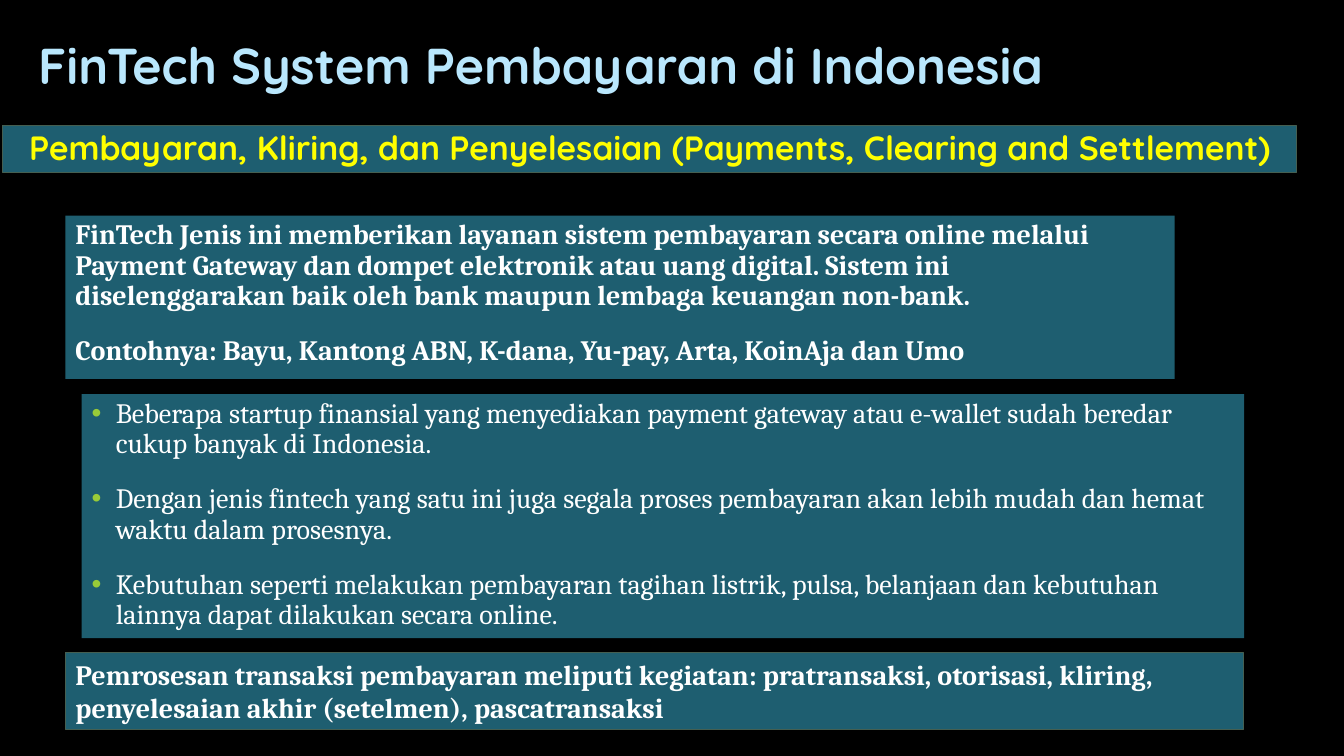
from lxml import etree
from pptx import Presentation
from pptx.dml.color import RGBColor
from pptx.enum.shapes import MSO_SHAPE
from pptx.enum.text import MSO_ANCHOR, PP_ALIGN
from pptx.oxml.ns import qn
from pptx.util import Inches, Pt

COLORS = {
    "background": "000000",
    "title": "B9E7FD",
    "panel": "1E5E70",
    "border": "455F51",
    "banner": "FFFF00",
    "text": "FFFFFF",
    "bullet": "99CB38",
}

TITLE = {"size": Pt(36), "name": "Quicksand", "bold": True}
BANNER = {"size": Pt(24), "name": "Quicksand", "bold": True}
STRONG = {"size": Pt(20), "name": "Cambria", "bold": True}
BODY = {"size": Pt(20), "name": "Cambria", "bold": False}

DEFINITION = [
    "FinTech Jenis ini memberikan layanan sistem pembayaran secara online melalui "
    "Payment Gateway dan dompet elektronik atau uang digital. Sistem ini "
    "diselenggarakan baik oleh bank maupun lembaga keuangan non-bank.",
    "Contohnya: Bayu, Kantong ABN, K-dana, Yu-pay, Arta, KoinAja dan Umo",
]
BENEFITS = [
    "Beberapa startup finansial yang menyediakan payment gateway atau e-wallet "
    "sudah beredar cukup banyak di Indonesia.",
    "Dengan jenis fintech yang satu ini juga segala proses pembayaran akan lebih "
    "mudah dan hemat waktu dalam prosesnya.",
    "Kebutuhan seperti melakukan pembayaran tagihan listrik, pulsa, belanjaan dan "
    "kebutuhan lainnya dapat dilakukan secara online.",
]
PROCESSING = [
    "Pemrosesan transaksi pembayaran meliputi kegiatan: pratransaksi, otorisasi, "
    "kliring, penyelesaian akhir (setelmen), pascatransaksi",
]


def color(name):
    return RGBColor.from_string(COLORS[name])


def add_bullet(paragraph):
    properties = paragraph._p.get_or_add_pPr()
    properties.set("marL", str(Inches(0.24)))
    properties.set("indent", str(-Inches(0.24)))
    bullet_color = etree.SubElement(properties, qn("a:buClr"))
    etree.SubElement(bullet_color, qn("a:srgbClr"), val=COLORS["bullet"])
    etree.SubElement(properties, qn("a:buFont"), typeface="Arial")
    etree.SubElement(properties, qn("a:buChar"), char="•")


def write_paragraphs(shape, texts, font_format, font_color, spacing=0.9,
                     align=PP_ALIGN.LEFT, anchor=MSO_ANCHOR.TOP, bullets=False):
    frame = shape.text_frame
    frame.word_wrap = True
    frame.vertical_anchor = anchor
    for index, text in enumerate(texts):
        paragraph = frame.paragraphs[0] if index == 0 else frame.add_paragraph()
        if bullets:
            add_bullet(paragraph)
        paragraph.alignment = align
        paragraph.line_spacing = spacing
        paragraph.space_before = Pt(18 if index else 0)
        run = paragraph.add_run()
        run.text = text
        for attribute, value in font_format.items():
            setattr(run.font, attribute, value)
        run.font.color.rgb = color(font_color)


def add_title(slide, text, box):
    shape = slide.shapes.add_textbox(*map(Inches, box))
    write_paragraphs(shape, [text], TITLE, "title", anchor=MSO_ANCHOR.BOTTOM)


def add_panel(slide, box, texts, font_format, font_color="text", border=False, **layout):
    shape = slide.shapes.add_shape(MSO_SHAPE.RECTANGLE, *map(Inches, box))
    shape.shadow.inherit = False
    shape.fill.solid()
    shape.fill.fore_color.rgb = color("panel")
    if border:
        shape.line.color.rgb = color("border")
        shape.line.width = Pt(0.75)
    else:
        shape.line.fill.background()
    write_paragraphs(shape, texts, font_format, font_color, **layout)


def main():
    presentation = Presentation()
    presentation.slide_width = Inches(13.33)
    presentation.slide_height = Inches(7.5)
    slide = presentation.slides.add_slide(presentation.slide_layouts[6])
    slide.background.fill.solid()
    slide.background.fill.fore_color.rgb = color("background")

    # Title and topic banner
    add_title(slide, "FinTech System Pembayaran di Indonesia", (0.28, 0.26, 11.33, 0.74))
    add_panel(slide, (0.03, 1.25, 12.83, 0.46),
              ["Pembayaran, Kliring, dan Penyelesaian (Payments, Clearing and Settlement)"],
              BANNER, "banner", border=True,
              align=PP_ALIGN.CENTER, anchor=MSO_ANCHOR.MIDDLE)

    # Definition, benefits and processing steps
    add_panel(slide, (0.65, 2.14, 11, 1.62), DEFINITION, STRONG)
    add_panel(slide, (0.81, 3.91, 11.53, 2.42), BENEFITS, BODY, bullets=True)
    add_panel(slide, (0.65, 6.47, 11.68, 0.77), PROCESSING, STRONG,
              border=True, spacing=1.0)

    presentation.save("out.pptx")


if __name__ == "__main__":
    main()
